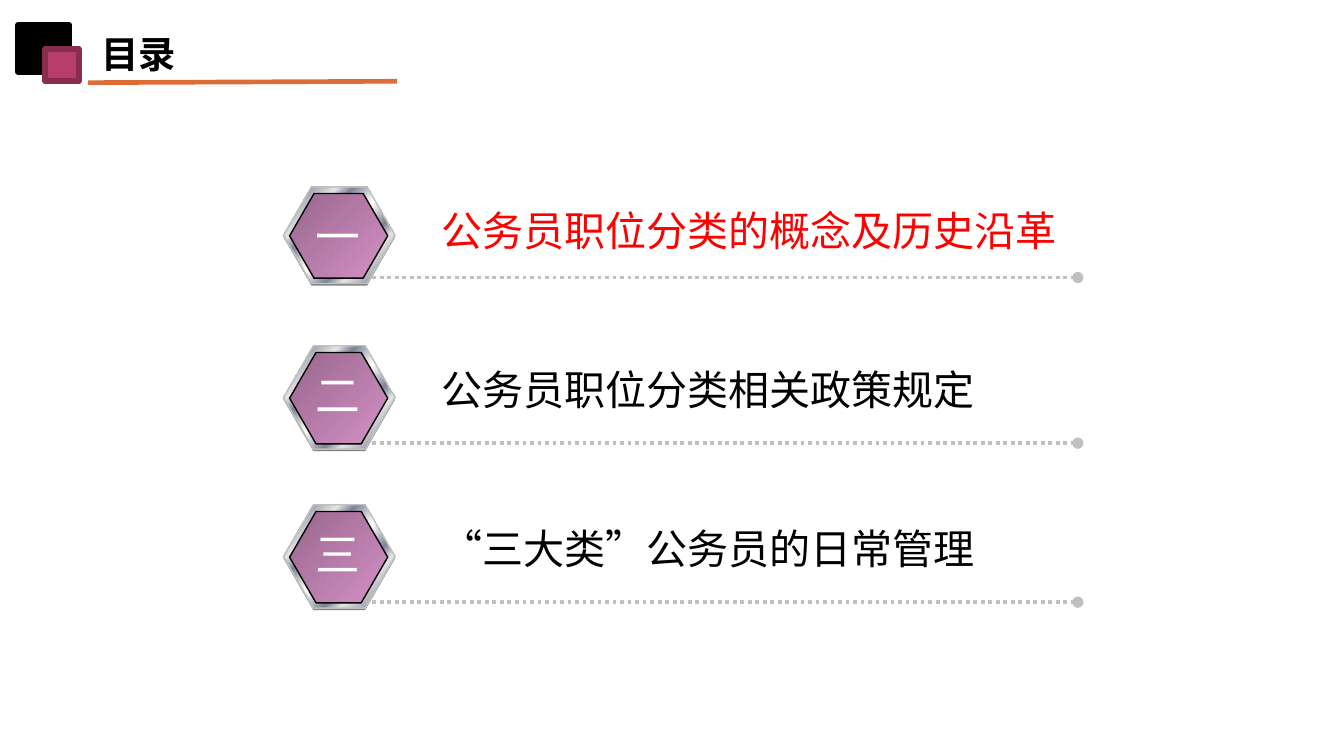
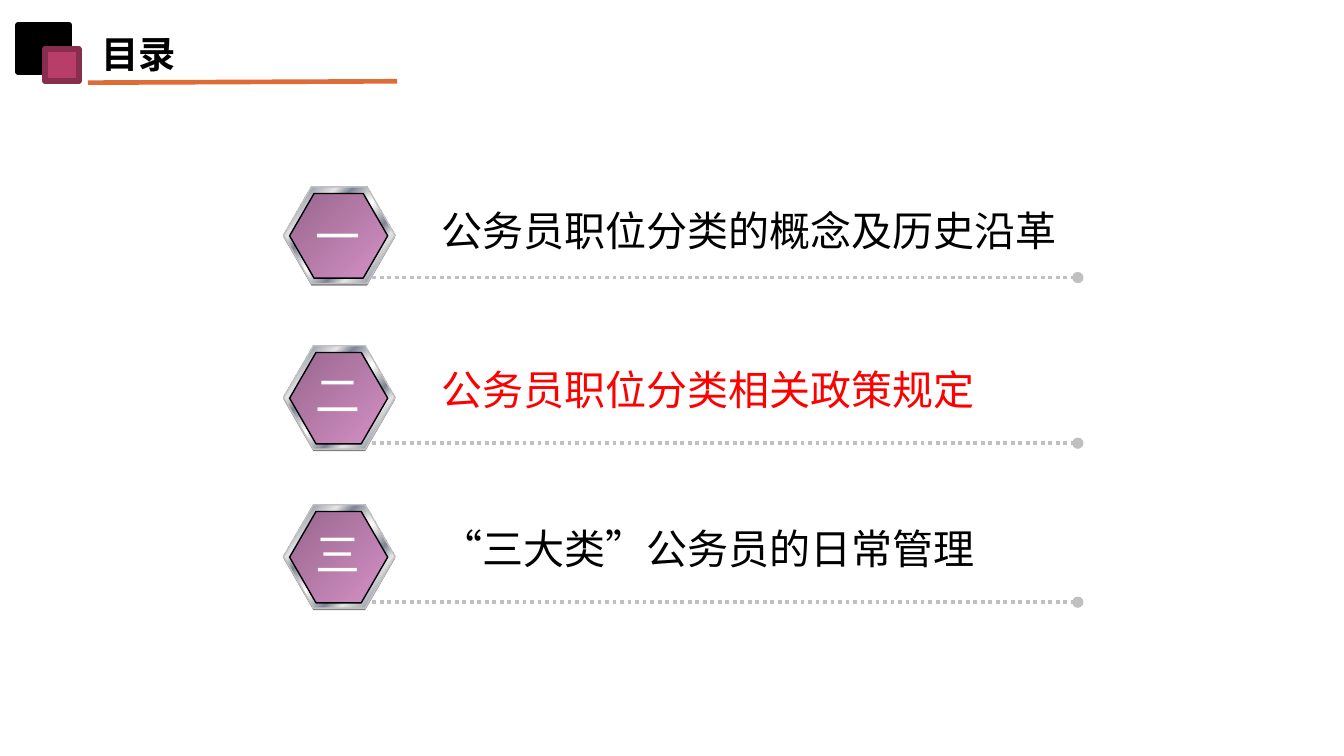
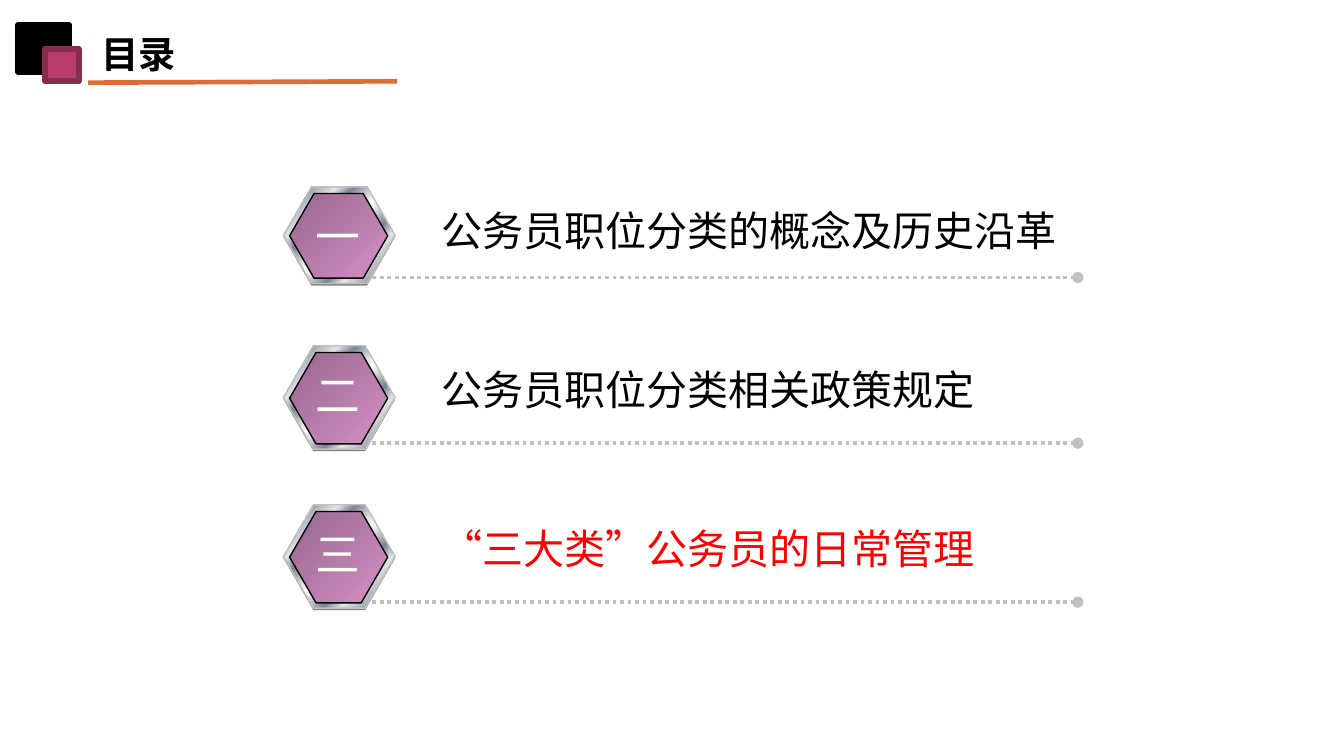
from dataclasses import dataclass

from lxml.etree import SubElement
from pptx import Presentation
from pptx.dml.color import RGBColor
from pptx.enum.dml import MSO_LINE
from pptx.enum.shapes import MSO_CONNECTOR as Connector, MSO_SHAPE as Preset
from pptx.enum.text import MSO_AUTO_SIZE as AutoSize, PP_ALIGN as Align
from pptx.oxml.ns import qn
from pptx.util import Inches, Pt


@dataclass(frozen=True)
class Theme:
    ink: str = "000000"
    highlight: str = "FF0000"
    numeral: str = "FFFFFF"
    accent: str = "B83D68"
    accent_edge: str = "882D4D"
    rule: str = "DE6C36"
    silver: str = "C0C0C0"
    drop: str = "808080"
    metal: tuple = (
        (0, "E6E6E6"), (8, "7D8496"), (26, "E6E6E6"), (34, "7D8496"),
        (46, "E6E6E6"), (50, "FFFFFF"), (54, "E6E6E6"), (66, "7D8496"),
        (74, "E6E6E6"), (92, "7D8496"), (100, "E6E6E6"),
    )
    plum: tuple = ((0, "98678D"), (100, "D490C5"))
    latin_font: str = "Arial"
    label_font: str = "Noto Sans CJK JP"
    title_size: int = 20
    label_size: int = 22
    numeral_size: int = 24


theme = Theme()
presentation = Presentation()
presentation.slide_width = Inches(10)
presentation.slide_height = presentation.slide_width * 9 // 16
cell = presentation.slide_width / 100


def draw_shape(shapes, preset, box, fill, edge=None, weight=0.75):
    shape = shapes.add_shape(preset, *(round(length * cell) for length in box))
    shape.shadow.inherit = False
    if preset == Preset.HEXAGON:
        shape.adjustments[0] = 0.289
    if isinstance(fill, tuple):
        shape.fill.gradient()
        shape.fill.gradient_angle = 315
        stops = shape._element.spPr.find(qn("a:gradFill")).find(qn("a:gsLst"))
        stops.clear()
        for percent, color in fill:
            stop = SubElement(stops, qn("a:gs"), pos=str(percent * 1000))
            SubElement(stop, qn("a:srgbClr"), val=color)
    else:
        shape.fill.solid()
        shape.fill.fore_color.rgb = RGBColor.from_string(fill)
    if edge:
        shape.line.color.rgb = RGBColor.from_string(edge)
        shape.line.width = Pt(weight)
    else:
        shape.line.fill.background()


def write_text(shapes, box, text, font_name, size, color, bold=False, centred=False):
    frame = shapes.add_textbox(*(round(length * cell) for length in box)).text_frame
    frame.word_wrap = not centred
    frame.auto_size = AutoSize.SHAPE_TO_FIT_TEXT
    paragraph = frame.paragraphs[0]
    paragraph.text = text
    paragraph.alignment = Align.CENTER if centred else Align.LEFT
    font = paragraph.font
    font.name, font.size, font.bold = font_name, Pt(size), bold
    font.color.rgb = RGBColor.from_string(color)
    defaults = paragraph._p.pPr.find(qn("a:defRPr"))
    SubElement(defaults, qn("a:ea"), typeface=font_name)


entries = [
    ("一", "公务员职位分类的概念及历史沿革", 7.2),
    ("二", "公务员职位分类相关政策规定", 7.7),
    ("三", "“三大类”公务员的日常管理", 7.7),
]
first_top, pitch = 13.9, 11.83
badge_left, badge_width = 21.1, 8.3

for current in range(len(entries)):
    slide = presentation.slides.add_slide(presentation.slide_layouts[6])

    header = slide.shapes.add_group_shape().shapes
    draw_shape(header, Preset.RECTANGLE, (1.35, 1.85, 3.8, 3.5), theme.ink, theme.ink, 3.15)
    draw_shape(header, Preset.RECTANGLE, (3.35, 3.65, 2.5, 2.4),
               theme.accent, theme.accent_edge, 3.15)
    ends = (round(length * cell) for length in (6.55, 6.15, 29.55, 6.05))
    title_rule = header.add_connector(Connector.STRAIGHT, *ends)
    title_rule.line.color.rgb = RGBColor.from_string(theme.rule)
    title_rule.line.width = Pt(2.5)
    SubElement(title_rule._element.spPr, qn("a:effectLst"))
    write_text(header, (6.55, 1.8, 21.3, 4.3), "目录",
               theme.latin_font, theme.title_size, theme.ink, bold=True)

    for index, (numeral, label, height) in enumerate(entries):
        top = first_top + index * pitch
        entry = slide.shapes.add_group_shape().shapes
        draw_shape(entry, Preset.HEXAGON,
                   (badge_left, top + 0.15, badge_width, height), theme.drop)
        draw_shape(entry, Preset.HEXAGON,
                   (badge_left, top, badge_width, height), theme.metal, theme.silver)
        draw_shape(entry, Preset.HEXAGON,
                   (badge_left + 0.45, top + 0.5, badge_width - 1, height - 0.9),
                   theme.plum, theme.ink)

        baseline = top + height - 0.45
        ends = (round(length * cell) for length in (27.7, baseline, 80.2, baseline))
        leader = entry.add_connector(Connector.STRAIGHT, *ends)
        leader.line.color.rgb = RGBColor.from_string(theme.silver)
        leader.line.width = Pt(2)
        leader.line.dash_style = MSO_LINE.ROUND_DOT
        properties = leader._element.spPr
        SubElement(properties.find(qn("a:ln")), qn("a:tailEnd"), type="oval")
        SubElement(properties, qn("a:effectLst"))

        write_text(entry, (31.9, top + 0.9, 49.2, 4.7), label, theme.label_font,
                   theme.label_size, theme.highlight if index == current else theme.ink)
        write_text(entry, (22.45, top + 1.15, 5.4, 5.4), numeral, theme.latin_font,
                   theme.numeral_size, theme.numeral, centred=True)

presentation.save("out.pptx")
